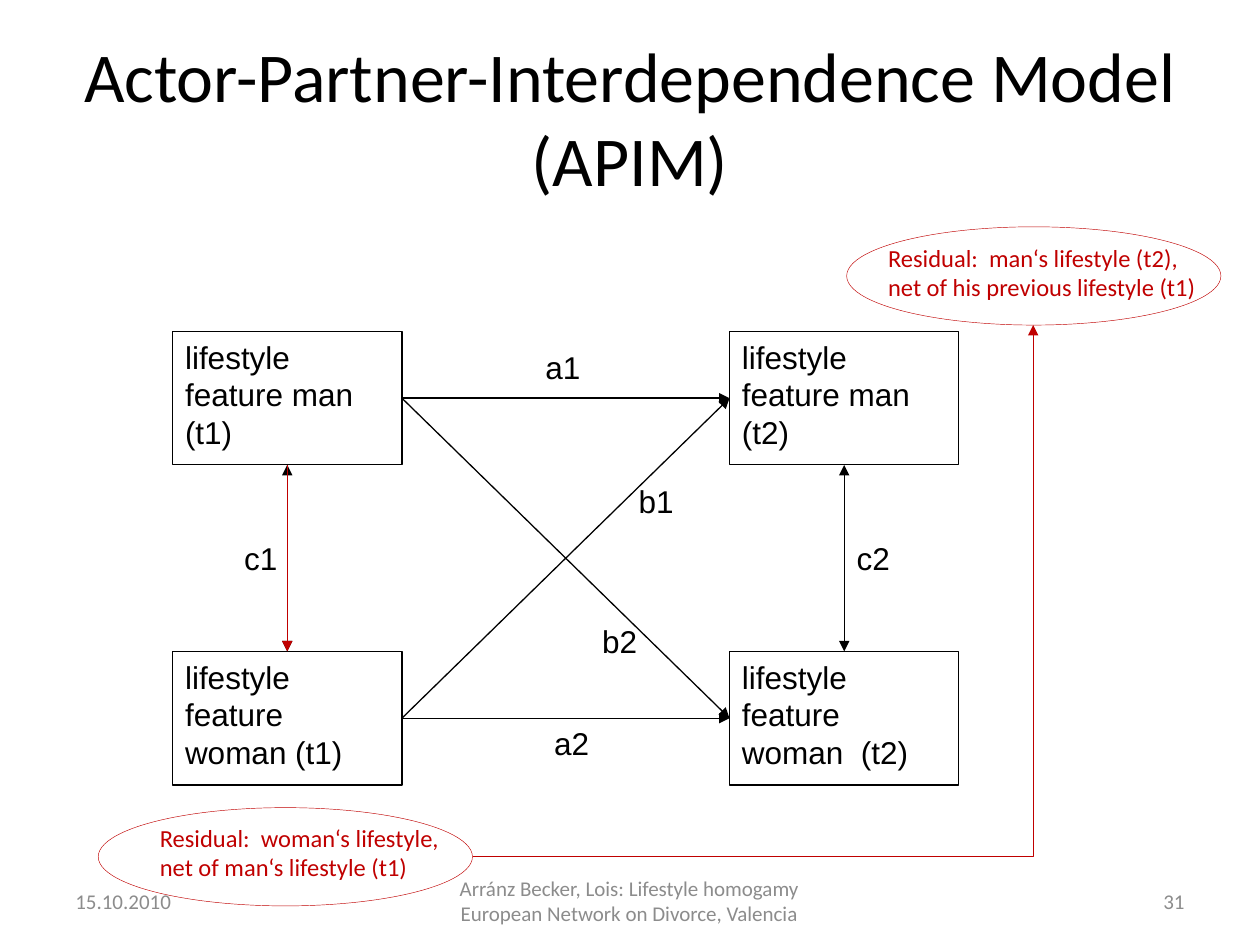
from lxml import etree
from pptx import Presentation
from pptx import util as u
from pptx.dml.color import RGBColor
from pptx.enum import shapes, text
from pptx.oxml.ns import qn

SCALE = 9144
COLORS = {"ink": "000000", "paper": "FFFFFF", "residual": "C00000", "muted": "8C8C8C"}
TITLE = {"size": u.Pt(40), "name": "Calibri"}
BODY = {"size": u.Pt(18), "name": "Arial"}
NOTE = {"size": u.Pt(14), "name": "Calibri"}
FOOTER = {"size": u.Pt(12), "name": "Calibri"}
ALIGN = text.PP_ALIGN
TOP, MIDDLE = text.MSO_ANCHOR.TOP, text.MSO_ANCHOR.MIDDLE


def px(*lengths):
    """Turn px lengths into EMU."""
    return [u.Emu(length * SCALE) for length in lengths]


def color(name):
    """Look up a colour of the slide."""
    return RGBColor.from_string(COLORS[name])


def write(shape, lines, font, ink="ink", align=ALIGN.LEFT, anchor=TOP, wrap=True):
    """Fill a shape with formatted paragraphs."""
    frame = shape.text_frame
    frame.text = "\n".join(lines)
    for name, value in {"word_wrap": wrap, "vertical_anchor": anchor}.items():
        setattr(frame, name, value)
    for paragraph in frame.paragraphs:
        paragraph.alignment = align
        for name, value in font.items():
            setattr(paragraph.runs[0].font, name, value)
        paragraph.runs[0].font.color.rgb = color(ink)


def add_text(slide, box, lines, font, **options):
    """Place a text box."""
    write(slide.shapes.add_textbox(*px(*box)), lines, font, **options)


def add_outline(slide, kind, box, ink, width):
    """Place an unfilled preset shape with a thin outline."""
    shape = slide.shapes.add_shape(kind, *px(*box))
    shape.shadow.inherit = False
    shape.fill.background()
    shape.line.color.rgb = color(ink)
    shape.line.width = u.Pt(width)
    return shape


def add_arrow(slide, start, end, ink="ink", both=False, bent=False):
    """Draw a straight or one-bend arrow between two points."""
    kind = shapes.MSO_CONNECTOR.ELBOW if bent else shapes.MSO_CONNECTOR.STRAIGHT
    arrow = slide.shapes.add_connector(kind, *px(*start, *end))
    arrow.line.color.rgb = color(ink)
    arrow.line.width = u.Pt(0.75)
    properties = arrow._element.spPr
    if bent:
        properties.find(qn("a:prstGeom")).set("prst", "bentConnector2")
    line = properties.find(qn("a:ln"))
    for tag in ["a:headEnd", "a:tailEnd"] if both else ["a:tailEnd"]:
        etree.SubElement(line, qn(tag), type="triangle")
    etree.SubElement(properties, qn("a:effectLst"))


def add_title(slide, box):
    """Place the slide title."""
    title = slide.shapes.title
    for name, value in zip(["left", "top", "width", "height"], px(*box)):
        setattr(title, name, value)
    write(title, ["Actor-Partner-Interdependence Model (APIM)"], TITLE,
          align=ALIGN.CENTER, anchor=MIDDLE)


def add_model(slide, box):
    """Place the four features, their paths and path labels."""
    left, top, width, height = box
    node_width, node_height = 182, 106
    right, bottom = left + width - node_width, top + height - node_height
    features = [
        (left, top, "lifestyle feature man  (t1)"),
        (right, top, "lifestyle feature man  (t2)"),
        (left, bottom, "lifestyle feature woman (t1)"),
        (right, bottom, "lifestyle feature woman  (t2)"),
    ]
    for x, y, words in features:
        node = add_outline(slide, shapes.MSO_SHAPE.RECTANGLE,
                           (x, y, node_width, node_height), "ink", 0.75)
        node.fill.solid()
        node.fill.fore_color.rgb = color("paper")
        write(node, [words], BODY)

    rows = [y + node_height // 2 for y in (top, bottom)]
    for start in rows:
        for end in rows:
            add_arrow(slide, (left + node_width, start), (right, end))
    for x in (left, right):
        center = x + node_width // 2
        add_arrow(slide, (center, top + node_height), (center, bottom), both=True)
    center = left + node_width // 2
    add_arrow(slide, (center, top + node_height), (center, bottom), "residual")

    labels = {"a1": (286, 8), "a2": (293, 307), "b1": (360, 115),
              "b2": (331, 226), "c1": (47, 160), "c2": (533, 160)}
    for label, (x, y) in labels.items():
        add_text(slide, (left + x, top + y, 66, 40), [label], BODY)


def add_residual(slide, box, text_box, lines):
    """Place a residual note inside its ellipse."""
    left, top, width, height = box
    x, y, text_width, text_height = text_box
    add_outline(slide, shapes.MSO_SHAPE.OVAL, box, "residual", 0.25)
    add_text(slide, (left + x, top + y, text_width, text_height), lines, NOTE,
             ink="residual", wrap=False)


def add_residuals(slide, woman, man):
    """Place both residuals and the bent arrow that joins them."""
    add_residual(slide, woman, (39, 7, 244, 57),
                 ["Residual:  woman‘s lifestyle,", "net of man‘s lifestyle (t1)"])
    add_residual(slide, man, (23, 8, 267, 57),
                 ["Residual:  man‘s lifestyle (t2),", "net of his previous lifestyle (t1)"])
    start = (woman[0] + woman[2], woman[1] + woman[3] // 2)
    end = (man[0] + man[2] // 2, man[1] + man[3])
    add_arrow(slide, start, end, "residual", bent=True)


def add_footer(slide, box):
    """Place date, source and slide number along the bottom."""
    left, top, width, height = box
    side, middle = 233, 317
    parts = [
        (left, side, "15.10.2010", ALIGN.LEFT),
        (left + (width - middle) // 2, middle,
         "Arránz Becker, Lois: Lifestyle homogamy European Network on Divorce, Valencia",
         ALIGN.CENTER),
        (left + width - side, side, "31", ALIGN.RIGHT),
    ]
    for x, part_width, words, align in parts:
        add_text(slide, (x, top, part_width, height), [words], FOOTER,
                 ink="muted", align=align, anchor=MIDDLE)


def main():
    """Build and save the slide."""
    presentation = Presentation()
    presentation.slide_width, presentation.slide_height = px(1000, 750)
    slide = presentation.slides.add_slide(presentation.slide_layouts[5])
    add_title(slide, (50, 30, 900, 125))
    add_model(slide, (137, 263, 624, 360))
    add_footer(slide, (50, 695, 900, 40))
    add_residuals(slide, (78, 641, 297, 78), (672, 180, 297, 78))
    presentation.save("out.pptx")


if __name__ == "__main__":
    main()
